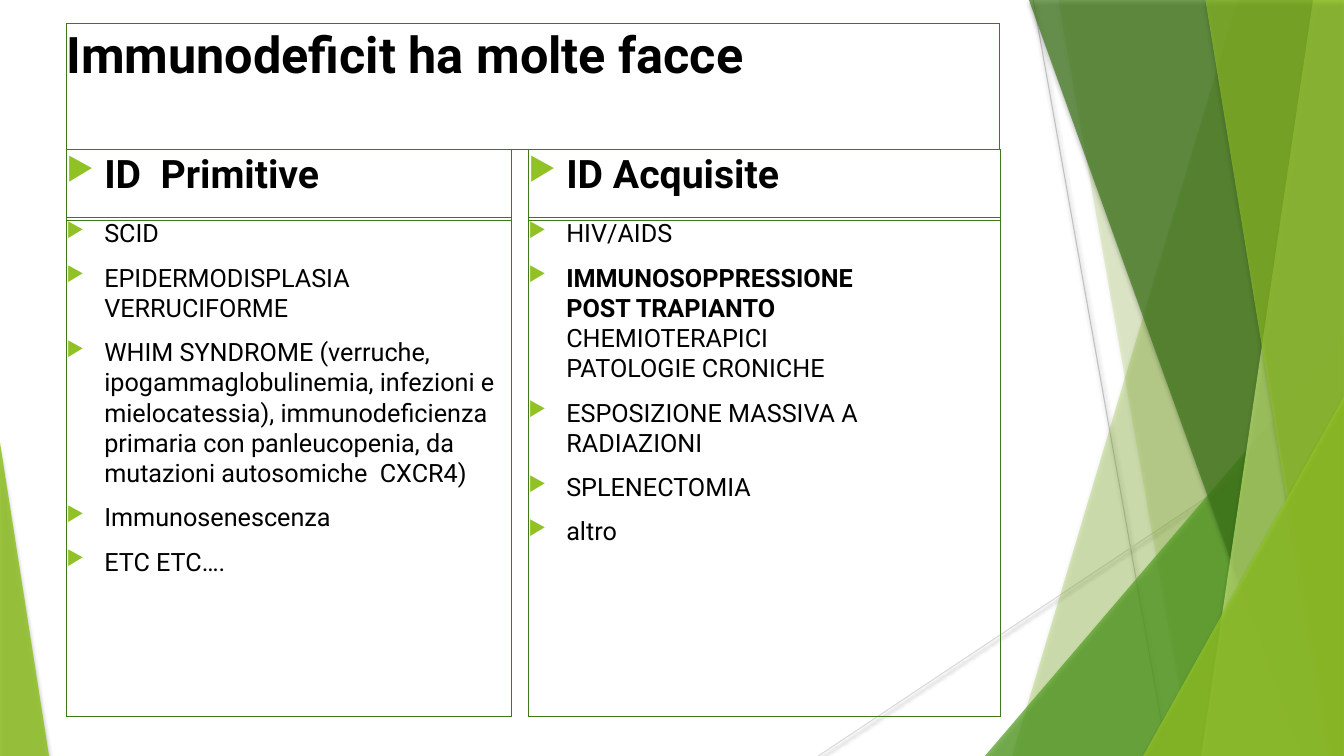
from dataclasses import dataclass

from lxml.etree import SubElement
from pptx import Presentation
from pptx.dml.color import RGBColor
from pptx.enum.shapes import MSO_CONNECTOR, MSO_SHAPE
from pptx.enum.text import MSO_ANCHOR, MSO_AUTO_SIZE, PP_ALIGN
from pptx.oxml.ns import qn
from pptx.util import Pt


@dataclass(frozen=True)
class Theme:
    font: str = "Roboto"
    ink: str = "000000"
    lime: str = "90C226"
    green: str = "54A021"
    forest: str = "3F7819"
    pale: str = "C0E474"
    thread_dark: str = "BFBFBF"
    thread_light: str = "D9D9D9"
    title_size: int = 36
    heading_size: int = 28
    body_size: int = 18


THEME = Theme()
WIDTH, HEIGHT = 960, 540
BULLET_INDENT = 27

# Each item is a list of (line, bold) pairs
PRIMARY = [
    [("SCID", False)],
    [("EPIDERMODISPLASIA VERRUCIFORME", False)],
    [("WHIM SYNDROME (verruche, ipogammaglobulinemia, infezioni e mielocatessia), "
      "immunodeficienza primaria con panleucopenia, da mutazioni autosomiche  CXCR4)", False)],
    [("Immunosenescenza", False)],
    [("ETC ETC….", False)],
]
ACQUIRED = [
    [("HIV/AIDS", False)],
    [("IMMUNOSOPPRESSIONE ", True), ("POST TRAPIANTO", True),
     ("CHEMIOTERAPICI", False), ("PATOLOGIE CRONICHE", False)],
    [("ESPOSIZIONE MASSIVA A RADIAZIONI", False)],
    [("SPLENECTOMIA", False)],
    [("altro", False)],
]


def add_shadow(shape, opacity, blur, distance):
    effects = SubElement(shape._element.spPr, qn("a:effectLst"))
    shadow = SubElement(effects, qn("a:outerShdw"), blurRad=str(Pt(blur)),
                        dist=str(Pt(distance)), dir="5400000", rotWithShape="0")
    color = SubElement(shadow, qn("a:srgbClr"), val=THEME.ink)
    SubElement(color, qn("a:alpha"), val=str(opacity * 1000))


def style_facet(shape, color, opacity):
    shape.fill.solid()
    shape.fill.fore_color.rgb = RGBColor.from_string(color)
    color_node = shape._element.spPr.find(qn("a:solidFill"))[0]
    SubElement(color_node, qn("a:alpha"), val=str(opacity * 1000))
    shape.line.fill.background()
    add_shadow(shape, 35, 3, 2)


def add_thread(page, start, end, color):
    thread = page.shapes.add_connector(MSO_CONNECTOR.STRAIGHT, *map(Pt, start + end))
    thread.line.color.rgb = RGBColor.from_string(color)
    thread.line.width = Pt(0.75)
    add_shadow(thread, 38, 3.1, 1.6)


def add_band(page, top_x, bottom_x, color, opacity):
    """A facet from a slanted left edge to the right edge of the slide."""
    builder = page.shapes.build_freeform(Pt(top_x), Pt(0), scale=1.0)
    corners = [(WIDTH, 0), (WIDTH, HEIGHT), (bottom_x, HEIGHT)]
    builder.add_line_segments([(Pt(x), Pt(y)) for x, y in corners], close=True)
    style_facet(builder.convert_to_shape(), color, opacity)


def add_corner(page, left, top, width, peak, color, opacity):
    """A right triangle standing on the bottom edge of the slide."""
    corner = page.shapes.add_shape(MSO_SHAPE.ISOSCELES_TRIANGLE, Pt(left), Pt(top),
                                   Pt(width), Pt(HEIGHT - top))
    corner.adjustments[0] = peak
    style_facet(corner, color, opacity)


def add_backdrop(page):
    add_thread(page, (738, 0), (834, HEIGHT), THEME.thread_dark)
    add_thread(page, (WIDTH, 290), (584.5, HEIGHT), THEME.thread_light)
    add_band(page, 884, 723, THEME.lime, 30)
    add_band(page, 756, 851, THEME.lime, 20)
    add_corner(page, 703.5, 240, 256.5, 1, THEME.green, 72)
    add_band(page, 735, 929.5, THEME.forest, 70)
    add_band(page, 938, 858, THEME.pale, 70)
    add_band(page, 861, 949, THEME.lime, 65)
    add_corner(page, 816.5, 283, 143.5, 1, THEME.lime, 80)
    add_corner(page, 0, 316, 35, 0, THEME.lime, 85)


def style_frame(box):
    box.fill.background()
    box.line.color.rgb = RGBColor.from_string(THEME.forest)
    box.line.width = Pt(0)
    frame = box.text_frame
    frame.margin_left = frame.margin_top = frame.margin_right = frame.margin_bottom = 0
    frame.word_wrap = True
    frame.auto_size = MSO_AUTO_SIZE.NONE
    frame.vertical_anchor = MSO_ANCHOR.TOP
    return frame


def style_para(para, size):
    para.alignment = PP_ALIGN.LEFT
    para.font.name = THEME.font
    para.font.size = Pt(size)
    para.font.color.rgb = RGBColor.from_string(THEME.ink)


def add_bullet(para):
    properties = para._p.get_or_add_pPr()
    properties.set("marL", str(Pt(BULLET_INDENT)))
    properties.set("indent", str(Pt(-BULLET_INDENT)))
    bullet = [SubElement(properties, qn("a:buClr")),
              SubElement(properties, qn("a:buSzPct"), val="80000"),
              SubElement(properties, qn("a:buChar"), char="▶")]
    SubElement(bullet[0], qn("a:srgbClr"), val=THEME.lime)


def add_list(page, left, top, width, height, items, size):
    box = page.shapes.add_textbox(Pt(left), Pt(top), Pt(width), Pt(height))
    frame = style_frame(box)
    for index, lines in enumerate(items):
        para = frame.add_paragraph() if index else frame.paragraphs[0]
        para.space_before = Pt(10)
        add_bullet(para)
        style_para(para, size)
        for number, (line, bold) in enumerate(lines):
            if number:
                para.add_line_break()
            span = para.add_run()
            span.text = line
            span.font.bold = bold


def add_title(page, left, top, width, height, text):
    title = page.shapes.title
    title.left, title.top, title.width, title.height = map(Pt, (left, top, width, height))
    frame = style_frame(title)
    frame.text = text
    para = frame.paragraphs[0]
    style_para(para, THEME.title_size)
    para.font.bold = True


def add_column(page, left, top, width, height, heading, items):
    add_list(page, left, top, width, 50.5, [[(heading, True)]], THEME.heading_size)
    body_offset = 48.5
    add_list(page, left, top + body_offset, width, height - body_offset, items,
             THEME.body_size)


def main():
    deck = Presentation()
    deck.slide_width, deck.slide_height = Pt(WIDTH), Pt(HEIGHT)
    page = deck.slides.add_slide(deck.slide_layouts[5])

    # Green facets behind the content
    add_backdrop(page)

    # Title and the two lists
    add_title(page, 47.5, 16.5, 666.5, 90, "Immunodeficit ha molte facce")
    add_column(page, 47.5, 107, 318, 405, "ID  Primitive", PRIMARY)
    add_column(page, 377.5, 107, 337, 405, "ID Acquisite", ACQUIRED)

    deck.save("out.pptx")


if __name__ == "__main__":
    main()
